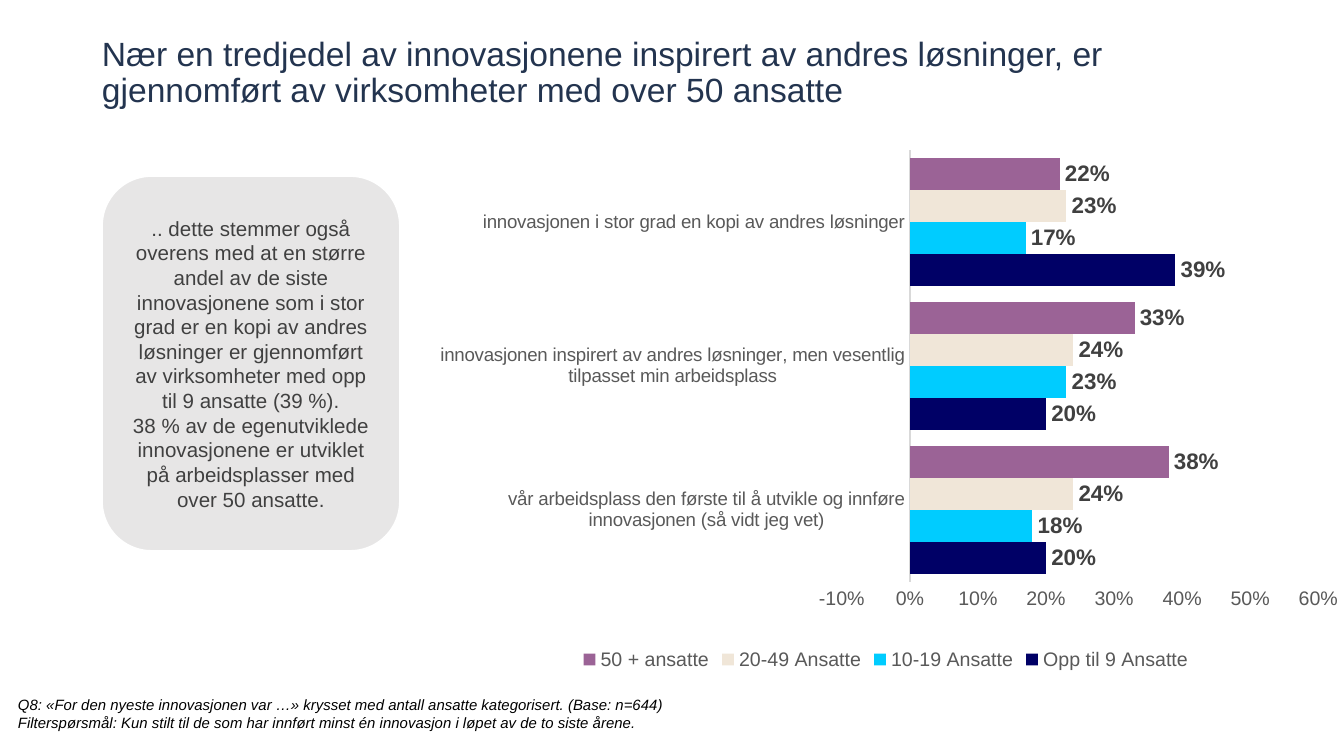
"""Build a slide on innovations by company size, with a clustered bar chart."""
from dataclasses import dataclass

from lxml import etree
from pptx import Presentation, util as u
from pptx.chart.data import CategoryChartData
from pptx.dml.color import RGBColor
from pptx.enum import chart as ce, shapes, text
from pptx.oxml import parse_xml
from pptx.oxml.ns import nsdecls, qn


@dataclass(frozen=True)
class Theme:
    font: str = "Arial"
    title: str = "23344F"
    body: str = "404040"
    axis: str = "595959"
    rule: str = "D9D9D9"
    panel: str = "E7E6E6"
    white: str = "FFFFFF"
    black: str = "000000"
    title_pt: float = 18
    body_pt: float = 11
    note_pt: float = 8
    label_pt: float = 12
    category_pt: float = 10
    axis_pt: float = 10.5


T = Theme()
SLIDE = (1344, 756)
SCALE = 9144000 / 1344

TITLE = ["Nær en tredjedel av innovasjonene inspirert av andres løsninger, er "
         "gjennomført av virksomheter med over 50 ansatte"]
COMMENT = [
    ".. dette stemmer også overens med at en større andel av de siste innovasjonene "
    "som i stor grad er en kopi av andres løsninger er gjennomført av virksomheter "
    "med opp til 9 ansatte (39 %).",
    "38 % av de egenutviklede innovasjonene er utviklet på arbeidsplasser med over 50 ansatte.",
]
NOTE = ["Q8: «For den nyeste innovasjonen var …» krysset med antall ansatte kategorisert. "
        "(Base: n=644) Filterspørsmål: Kun stilt til de som har innført minst én "
        "innovasjon i løpet av de to siste årene."]
CATEGORIES = [
    "vår arbeidsplass den første til å utvikle og innføre innovasjonen (så vidt jeg vet)",
    "innovasjonen inspirert av andres løsninger, men vesentlig tilpasset min arbeidsplass",
    "innovasjonen i stor grad en kopi av andres løsninger",
]
SERIES = [
    ("Opp til 9 Ansatte", (0.20, 0.20, 0.39), "000066"),
    ("10-19 Ansatte", (0.18, 0.23, 0.17), "00CCFF"),
    ("20-49 Ansatte", (0.24, 0.24, 0.23), "F0E6D8"),
    ("50 + ansatte", (0.38, 0.33, 0.22), "9B6396"),
]
PLOT = {"x": 0.453, "y": 0.038, "w": 0.508, "h": 0.79}


def px(*lengths):
    return [u.Emu(round(n * SCALE)) for n in lengths]


def rgb(value):
    return RGBColor.from_string(value)


def style(font, size, color, bold=False, italic=False):
    font.name, font.size, font.bold, font.italic = T.font, u.Pt(size), bold, italic
    font.color.rgb = rgb(color)


def write(tf, paragraphs, size, color, align=text.PP_ALIGN.LEFT, spacing=1.0, italic=False):
    tf.word_wrap = True
    for i, line in enumerate(paragraphs):
        p = tf.add_paragraph() if i else tf.paragraphs[0]
        p.alignment, p.line_spacing = align, spacing
        r = p.add_run()
        r.text = line
        style(r.font, size, color, italic=italic)


def add_text(s, box, paragraphs, size, color, anchor, **options):
    tf = s.shapes.add_textbox(*px(*box)).text_frame
    tf.margin_left = tf.margin_right = tf.margin_top = tf.margin_bottom = 0
    tf.vertical_anchor = anchor
    write(tf, paragraphs, size, color, **options)


def add_panel(s, box, paragraphs):
    sp = s.shapes.add_shape(shapes.MSO_SHAPE.ROUNDED_RECTANGLE, *px(*box))
    sp.shadow.inherit = False
    sp.fill.solid()
    sp.fill.fore_color.rgb = rgb(T.panel)
    sp.line.color.rgb = rgb(T.white)
    sp.line.width = u.Pt(1)
    sp.text_frame.vertical_anchor = text.MSO_ANCHOR.MIDDLE
    write(sp.text_frame, paragraphs, T.body_pt, T.body, align=text.PP_ALIGN.CENTER)


def place_plot(chart):
    area = chart.element.find(".//" + qn("c:plotArea"))
    for old in area.findall(qn("c:layout")):
        area.remove(old)
    layout = parse_xml(f"<c:layout {nsdecls('c')}><c:manualLayout/></c:layout>")
    settings = [("layoutTarget", "inner"), ("xMode", "edge"), ("yMode", "edge"), *PLOT.items()]
    for tag, value in settings:
        etree.SubElement(layout[0], qn(f"c:{tag}")).set("val", str(value))
    area.insert(0, layout)


def add_bars(s, box):
    data = CategoryChartData(number_format="0%")
    data.categories = CATEGORIES
    for name, values, _ in SERIES:
        data.add_series(name, values)
    chart = s.shapes.add_chart(ce.XL_CHART_TYPE.BAR_CLUSTERED, *px(*box), data).chart
    style(chart.font, T.category_pt, T.black)
    chart.has_title = False
    chart.has_legend = True
    chart.legend.position = ce.XL_LEGEND_POSITION.BOTTOM
    chart.legend.include_in_layout = False
    style(chart.legend.font, T.axis_pt, T.axis)

    for axis, size in ((chart.category_axis, T.category_pt), (chart.value_axis, T.axis_pt)):
        axis.major_tick_mark = axis.minor_tick_mark = ce.XL_TICK_MARK.NONE
        axis.has_major_gridlines = False
        style(axis.tick_labels.font, size, T.axis)
    chart.category_axis.format.line.color.rgb = rgb(T.rule)
    chart.category_axis.format.line.width = u.Pt(0.75)
    scale = chart.value_axis
    scale.minimum_scale, scale.maximum_scale, scale.major_unit = -0.1, 0.6, 0.1
    scale.tick_labels.number_format = "0%"
    scale.tick_labels.number_format_is_linked = False
    scale.format.line.fill.background()

    plot = chart.plots[0]
    plot.gap_width, plot.overlap, plot.vary_by_categories = 50, 0, False
    for series, (_, _, color) in zip(plot.series, SERIES):
        series.invert_if_negative = False
        series.format.fill.solid()
        series.format.fill.fore_color.rgb = rgb(color)
        labels = series.data_labels
        labels.show_value = True
        labels.position = ce.XL_LABEL_POSITION.OUTSIDE_END
        labels.number_format, labels.number_format_is_linked = "0%", False
        style(labels.font, T.label_pt, T.body, bold=True)
    place_plot(chart)


def main():
    prs = Presentation()
    prs.slide_width, prs.slide_height = px(*SLIDE)
    s = prs.slides.add_slide(prs.slide_layouts[6])
    add_text(s, (102, 58, 1184, 52), TITLE, T.title_pt, T.title,
             text.MSO_ANCHOR.BOTTOM, spacing=0.9)
    add_text(s, (18, 696, 653, 36), NOTE, T.note_pt, T.black,
             text.MSO_ANCHOR.TOP, italic=True)
    add_bars(s, (417, 129, 938, 547))
    add_panel(s, (102, 176, 298, 375), COMMENT)
    prs.save("out.pptx")


if __name__ == "__main__":
    main()
